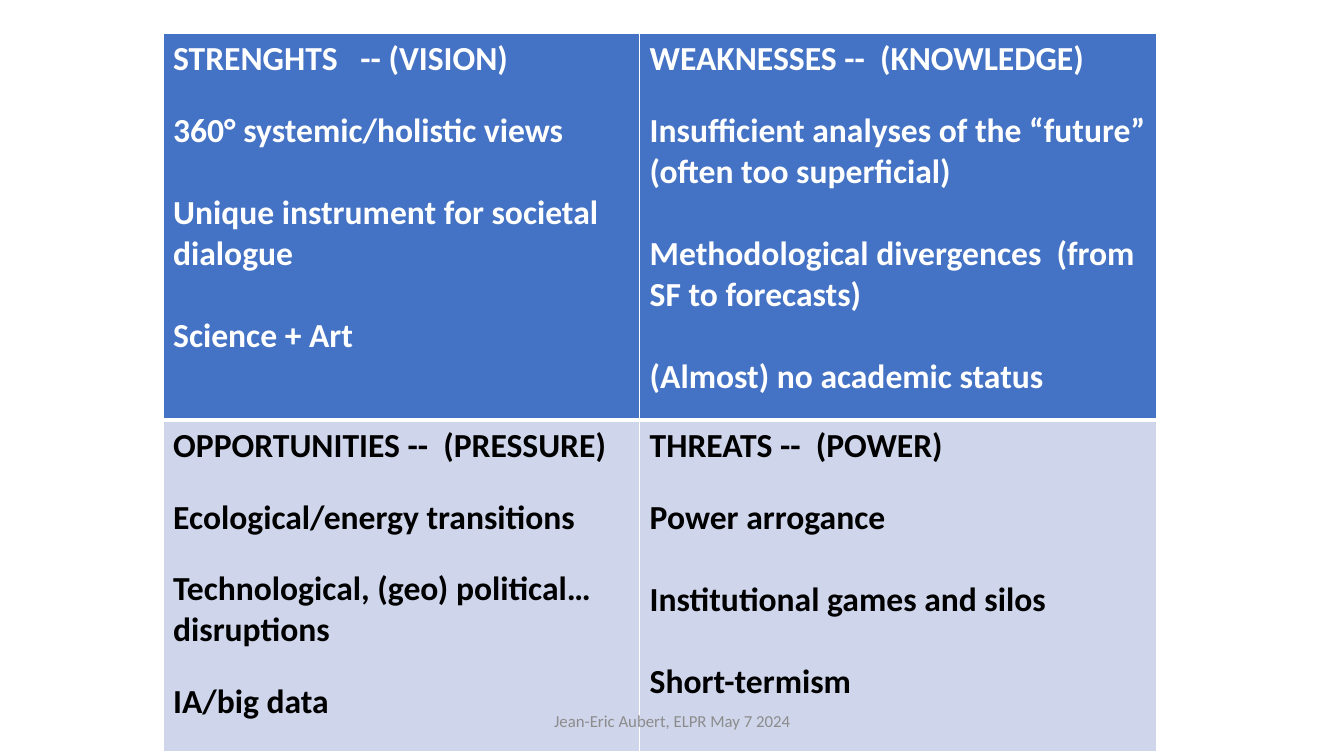
import pptx
import pptx.dml.color
import pptx.enum.text
import pptx.oxml
import pptx.oxml.ns
import pptx.util
from pptx.util import Cm

QUADRANTS = [
    [
        ("STRENGHTS   -- (VISION)", "360° systemic/holistic views",
         "Unique instrument for societal dialogue", "Science + Art"),
        ("WEAKNESSES --  (KNOWLEDGE)",
         "Insufficient analyses of the “future” (often too superficial)",
         "Methodological divergences  (from SF to forecasts)",
         "(Almost) no academic status"),
    ],
    [
        ("OPPORTUNITIES --  (PRESSURE)", "Ecological/energy transitions",
         "Technological, (geo) political…disruptions", "IA/big data"),
        ("THREATS --  (POWER)", "Power arrogance",
         "Institutional games and silos", "Short-termism"),
    ],
]
NARROW, WIDE = 22, 29.3
GAPS = [
    [(0, NARROW, WIDE, WIDE), (0, NARROW, WIDE, WIDE)],
    [(0, NARROW, NARROW, NARROW), (0, NARROW, WIDE, WIDE)],
]
ROW_STYLES = [
    {"fill": "4472C4", "color": "FFFFFF", "top": 1, "bottom": 3},
    {"fill": "CFD5EA", "color": "000000", "top": 3, "bottom": 1},
]


def rgb(value):
    return pptx.dml.color.RGBColor.from_string(value)


class SlideBuilder:
    font = "Calibri"
    border = "FFFFFF"

    def __init__(self, deck):
        self.slide = deck.slides.add_slide(deck.slide_layouts[6])

    def format_span(self, span, size, color, bold=False):
        span.font.name = self.font
        span.font.size = pptx.util.Pt(size)
        span.font.bold = bold
        span.font.color.rgb = rgb(color)

    def border_cell(self, cell, top, bottom):
        properties = cell._tc.get_or_add_tcPr()
        for side, width in (("L", 1), ("R", 1), ("T", top), ("B", bottom)):
            properties.append(pptx.oxml.parse_xml(
                f'<a:ln{side} {pptx.oxml.ns.nsdecls("a")} w="{pptx.util.Pt(width)}">'
                f'<a:solidFill><a:srgbClr val="{self.border}"/></a:solidFill></a:ln{side}>'))

    def fill_cell(self, cell, lines, gaps, style):
        self.border_cell(cell, style["top"], style["bottom"])
        cell.fill.solid()
        cell.fill.fore_color.rgb = rgb(style["fill"])
        cell.text_frame.text = "\n".join(lines)
        for para, gap in zip(cell.text_frame.paragraphs, gaps):
            para.space_before = pptx.util.Pt(gap)
            self.format_span(para.runs[0], 24, style["color"], bold=True)

    def table(self, left, top, widths, heights, contents, gaps, styles):
        table = self.slide.shapes.add_table(
            len(heights), len(widths), Cm(left), Cm(top),
            Cm(sum(widths)), Cm(sum(heights))).table
        for column, width in zip(table.columns, widths):
            column.width = Cm(width)
        for r, height in enumerate(heights):
            table.rows[r].height = Cm(height)
            for c, lines in enumerate(contents[r]):
                self.fill_cell(table.cell(r, c), lines, gaps[r][c], styles[r])

    def footer(self, text, left, top, width, height):
        box = self.slide.shapes.add_textbox(Cm(left), Cm(top), Cm(width), Cm(height))
        frame = box.text_frame
        frame.word_wrap = True
        frame.vertical_anchor = pptx.enum.text.MSO_ANCHOR.MIDDLE
        frame.text = text
        para = frame.paragraphs[0]
        para.alignment = pptx.enum.text.PP_ALIGN.CENTER
        self.format_span(para.runs[0], 12, "8C8C8C")


def main():
    deck = pptx.Presentation()
    deck.slide_width = Cm(33.87)
    deck.slide_height = Cm(19.05)
    page = SlideBuilder(deck)
    page.table(4.11, 0.84, (12.01, 13.03), (9.75, 8.36), QUADRANTS, GAPS, ROW_STYLES)
    page.footer("Jean-Eric Aubert, ELPR May 7 2024", 11.23, 17.65, 11.43, 1.02)
    deck.save("out.pptx")


if __name__ == "__main__":
    main()
